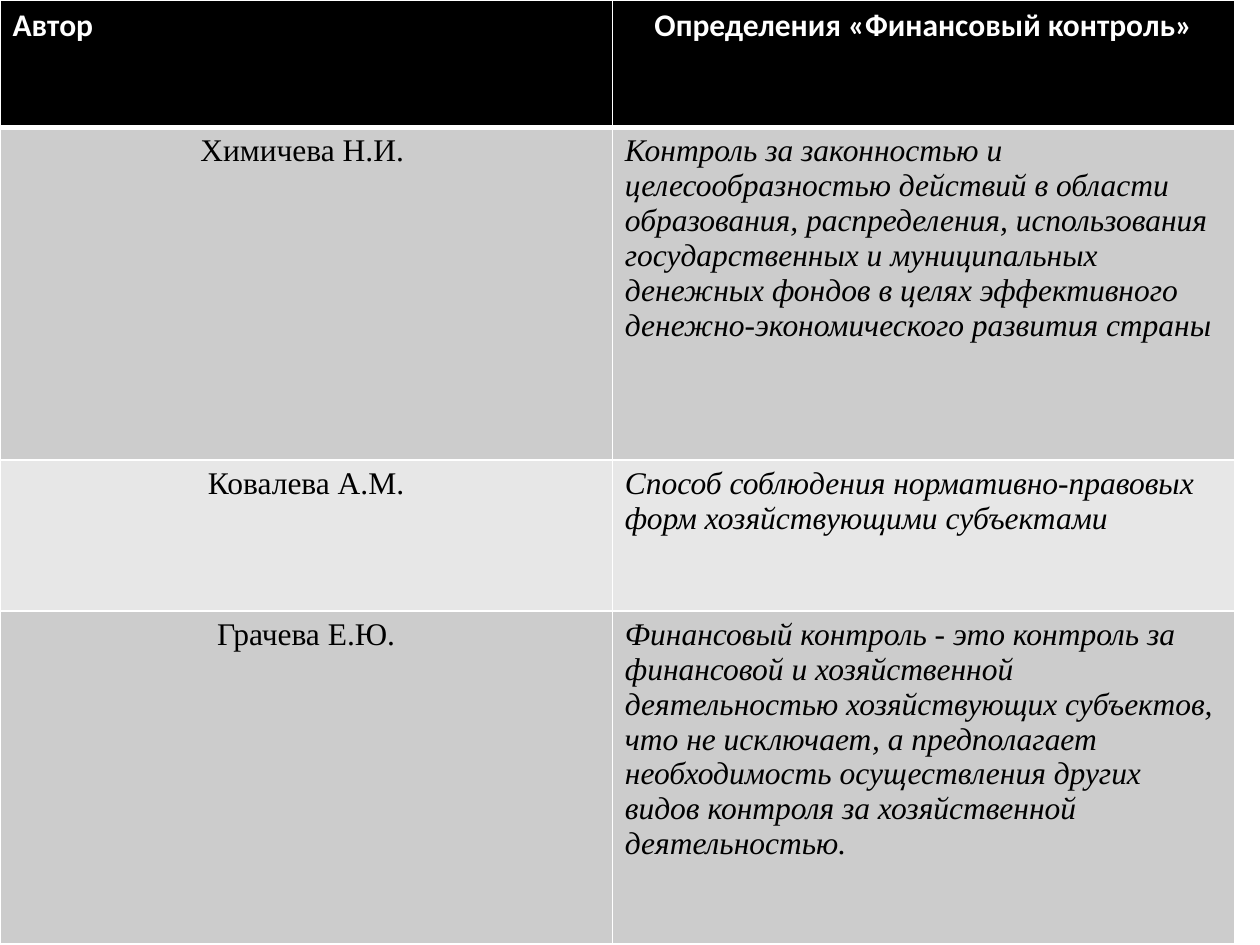
from lxml.etree import SubElement
from pptx import Presentation
from pptx.dml.color import RGBColor
from pptx.enum.text import PP_ALIGN
from pptx.oxml.ns import qn
from pptx.util import Inches, Pt

WHITE = RGBColor(0xFF, 0xFF, 0xFF)
BLACK = RGBColor(0, 0, 0)
DARK = RGBColor(0xCC, 0xCC, 0xCC)
LIGHT = RGBColor(0xE7, 0xE7, 0xE7)

COLS = (4.86, 4.94)
ROWS = (1.01, 2.64, 1.2, 2.64)

# Text formats
HEAD = {"name": "Calibri", "size": Pt(18), "bold": True, "italic": False}
NAME = {"name": "Times New Roman", "size": Pt(18), "bold": False, "italic": False}
TERM = {**NAME, "italic": True}

TITLES = ("Автор", "Определения «Финансовый контроль»")
TERMS = (
    ("Химичева Н.И. ",
     "Контроль за законностью и целесообразностью действий в области "
     "образования, распределения, использования государственных и "
     "муниципальных денежных фондов в целях эффективного "
     "денежно-экономического развития страны"),
    ("Ковалева А.М.",
     "Способ соблюдения нормативно-правовых форм хозяйствующими субъектами"),
    ("Грачева Е.Ю.",
     "Финансовый контроль - это контроль за финансовой и хозяйственной "
     "деятельностью хозяйствующих субъектов, что не исключает, а "
     "предполагает необходимость осуществления других видов контроля за "
     "хозяйственной деятельностью."),
)


def add_grid(slide):
    """Add the empty table with its column and row sizes."""
    frame = slide.shapes.add_table(
        len(ROWS), len(COLS), 0, 0, Inches(sum(COLS)), Inches(sum(ROWS)))
    grid = frame.table
    for col, width in zip(grid.columns, COLS):
        col.width = Inches(width)
    for row, height in zip(grid.rows, ROWS):
        row.height = Inches(height)
    return grid


def set_edges(cell, widths):
    """Draw white cell borders; they must stand before the fill."""
    props = cell._tc.get_or_add_tcPr()
    for side, width in widths.items():
        line = SubElement(props, qn(f"a:ln{side}"), w=str(Pt(width)))
        fill = SubElement(line, qn("a:solidFill"))
        SubElement(fill, qn("a:srgbClr"), val=str(WHITE))


def fill_cell(cell, text, style, color, back, align, top=1, base=1):
    """Set the borders, fill and text of one cell."""
    set_edges(cell, {"L": 1, "R": 1, "T": top, "B": base})
    cell.fill.solid()
    cell.fill.fore_color.rgb = back
    para = cell.text_frame.paragraphs[0]
    para.alignment = align
    run = para.add_run()
    run.text = text
    for key, value in style.items():
        setattr(run.font, key, value)
    run.font.color.rgb = color


def main():
    deck = Presentation()
    deck.slide_width, deck.slide_height = Inches(10), Inches(7.5)
    slide = deck.slides.add_slide(deck.slide_layouts[6])
    grid = add_grid(slide)

    # Header row
    for col, align in enumerate((PP_ALIGN.JUSTIFY, PP_ALIGN.CENTER)):
        fill_cell(grid.cell(0, col), TITLES[col], HEAD, WHITE, BLACK, align,
                  base=3)

    # Authors and their definitions, in banded rows
    for row, (name, term) in enumerate(TERMS, 1):
        back = DARK if row % 2 else LIGHT
        top = 3 if row == 1 else 1
        fill_cell(grid.cell(row, 0), name, NAME, BLACK, back,
                  PP_ALIGN.CENTER, top)
        fill_cell(grid.cell(row, 1), term, TERM, BLACK, back,
                  PP_ALIGN.LEFT, top)

    deck.save("out.pptx")


if __name__ == "__main__":
    main()
